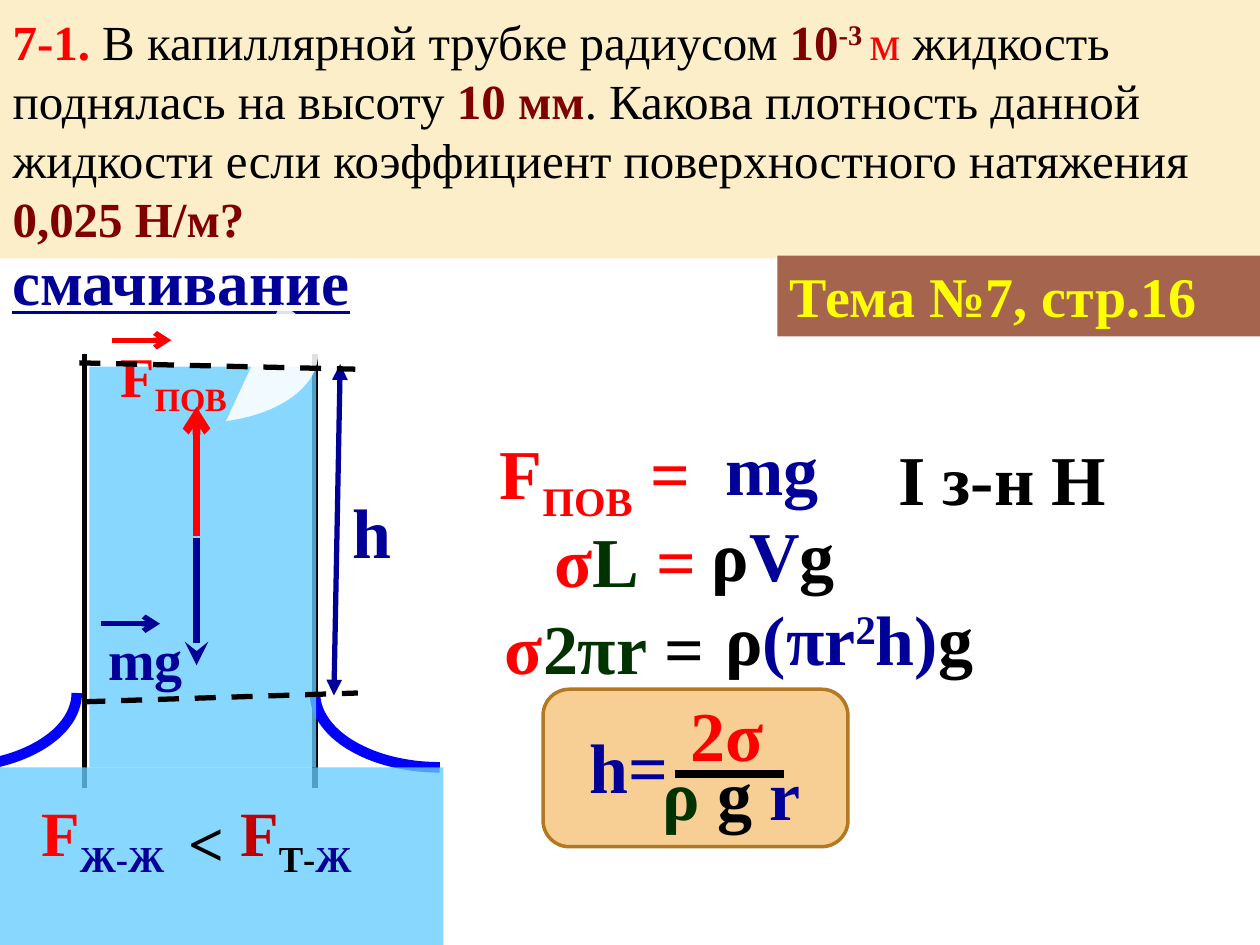
import math

from pptx import Presentation
from pptx.dml.color import RGBColor
from pptx.enum import dml, shapes, text
from pptx.oxml import xmlchemy
from pptx.util import Inches, Pt

FONT = "Times New Roman"
BLACK = RGBColor(0x00, 0x00, 0x00)
WHITE = RGBColor(0xFF, 0xFF, 0xFF)
RED = RGBColor(0xFF, 0x00, 0x00)
DARK_RED = RGBColor(0xC0, 0x00, 0x00)
MAROON = RGBColor(0x80, 0x00, 0x00)
NAVY = RGBColor(0x00, 0x00, 0x99)
BLUE = RGBColor(0x00, 0x00, 0xFF)
GREEN = RGBColor(0x00, 0x33, 0x00)
YELLOW = RGBColor(0xFF, 0xFF, 0x00)
WATER = RGBColor(0x66, 0xCC, 0xFF)
ORANGE = RGBColor(0xF0, 0xA2, 0x2E)
OCHRE = RGBColor(0xB2, 0x78, 0x22)
CREAM = RGBColor(0xFB, 0xEE, 0xC9)
BROWN = RGBColor(0xA5, 0x64, 0x4E)


def add_child(parent, tag, **attributes):
    """Append a drawing element with the given attributes."""
    child = xmlchemy.OxmlElement(tag)
    for name, value in attributes.items():
        child.set(name, str(value))
    parent.append(child)


def add_run(paragraph, content, color, *, size, bold=True, underline=False, baseline=0):
    """Add one formatted run; baseline is a percentage of the size."""
    run = paragraph.add_run()
    run.text = content
    font = run.font
    font.name, font.size, font.bold = FONT, Pt(size), bold
    font.color.rgb = color
    if underline:
        font.underline = True
    if baseline:
        font._element.set("baseline", str(baseline * 1000))


def write(shape, runs, *, size, bold=True, underline=False, wrap=False,
          grow=True, anchor=text.MSO_ANCHOR.TOP):
    """Fill a shape with one left-aligned paragraph of (text, color, options) runs."""
    frame = shape.text_frame
    frame.word_wrap = wrap
    frame.auto_size = (text.MSO_AUTO_SIZE.SHAPE_TO_FIT_TEXT if grow
                       else text.MSO_AUTO_SIZE.NONE)
    frame.vertical_anchor = anchor
    paragraph = frame.paragraphs[0]
    paragraph.alignment = text.PP_ALIGN.LEFT
    for content, color, *options in runs:
        style = {"size": size, "bold": bold, "underline": underline}
        for option in options:
            style.update(option)
        add_run(paragraph, content, color, **style)


def add_label(slide, box, *runs, size=40, **style):
    """Add a text box holding formatted runs."""
    shape = slide.shapes.add_textbox(*map(Inches, box))
    write(shape, runs, size=size, **style)


def add_block(slide, kind, box, fill, *, opacity=100, line=None):
    """Add a filled preset shape, outlined when a line colour is given."""
    shape = slide.shapes.add_shape(kind, *map(Inches, box))
    shape.shadow.inherit = False
    shape.fill.solid()
    shape.fill.fore_color.rgb = fill
    if opacity < 100:
        color = shape.fill._xPr.solidFill.srgbClr
        add_child(color, "a:alpha", val=opacity * 1000)
    if line is None:
        shape.line.fill.background()
    else:
        shape.line.color.rgb = line
        shape.line.width = Pt(2)
    return shape


def add_line(slide, start, end, color=BLACK, *, width=3, dashed=False, head=None, tail=None):
    """Add a straight line with optional dashes and arrowheads."""
    connector = slide.shapes.add_connector(
        shapes.MSO_CONNECTOR.STRAIGHT, *map(Inches, start + end))
    connector.line.color.rgb = color
    connector.line.width = Pt(width)
    if dashed:
        connector.line.dash_style = dml.MSO_LINE.DASH
    outline = connector.line._get_or_add_ln()
    if head:
        add_child(outline, "a:headEnd", type=head)
    if tail:
        add_child(outline, "a:tailEnd", type=tail)
    add_child(connector._element.spPr, "a:effectLst")


def add_meniscus(slide, center, radius_x, radius_y, steps=30):
    """Draw a lower quarter of an ellipse; a negative radius_x mirrors it."""
    angles = [math.pi / 2 * step / steps for step in range(steps + 1)]
    points = [(Inches(center[0] + radius_x * math.sin(angle)),
               Inches(center[1] + radius_y * math.cos(angle))) for angle in angles]
    builder = slide.shapes.build_freeform(*points[0])
    builder.add_line_segments(points[1:], close=False)
    curve = builder.convert_to_shape()
    curve.shadow.inherit = False
    curve.fill.background()
    curve.line.color.rgb = BLUE
    curve.line.width = Pt(6)


def add_problem(slide):
    """Put the problem statement into the title placeholder."""
    title = slide.shapes.title
    title.left, title.top, title.width, title.height = map(Inches, (0, 0, 10, 2.05))
    title.fill.solid()
    title.fill.fore_color.rgb = CREAM
    strong, raised = {"bold": True}, {"bold": True, "baseline": 30}
    write(title, [
        ("7-1.", RED, strong),
        (" В капиллярной трубке радиусом ", BLACK),
        ("10", MAROON, strong), ("-3 ", MAROON, raised), ("м", RED),
        (" жидкость поднялась на высоту ", BLACK),
        ("10 мм", MAROON, strong),
        (". Какова плотность данной жидкости если коэффициент "
         "поверхностного натяжения ", BLACK),
        ("0,025 Н/м?", MAROON, strong),
    ], size=28, bold=False, wrap=True, anchor=text.MSO_ANCHOR.MIDDLE)


def add_tube(slide):
    """Draw the capillary tube, its liquid and the forces."""
    preset, low = shapes.MSO_SHAPE, {"baseline": -25}
    for x in (0.67, 2.5):
        add_line(slide, (x, 2.81), (x, 6.25))
    add_meniscus(slide, (-0.39, 5.5), 1, 0.59)
    add_meniscus(slide, (3.49, 5.5), -0.99, 0.59)
    add_line(slide, (2.7, 2.89), (2.65, 5.52), NAVY, head="triangle", tail="triangle")
    add_block(slide, preset.RECTANGLE, (0.71, 2.91, 1.8, 3.18), WATER, opacity=78)
    surface = add_block(slide, preset.CHORD, (1.04, 1.87, 1.09, 1.88), WHITE, opacity=88)
    surface.rotation = 270
    for index, degrees in enumerate((58.27, 158.54)):
        surface.adjustments[index] = degrees * 0.6
    add_line(slide, (1.56, 4.25), (1.56, 3.23), RED, width=4.5, tail="arrow")
    add_line(slide, (1.56, 5.28), (1.56, 4.27), NAVY, width=4.5, head="stealth")
    add_label(slide, (0.86, 2.66, 1.14, 0.64), ("F", RED), ("ПОВ", RED, low), size=32)
    add_label(slide, (0.76, 4.91, 0.8, 0.64), ("mg", NAVY), size=32)
    for x, y, color in ((0.89, 2.7, RED), (0.8, 4.95, NAVY)):
        add_line(slide, (x, y), (x + 0.47, y), color, tail="arrow")
    add_label(slide, (2.7, 3.83, 0.51, 0.77), ("h", NAVY))
    add_line(slide, (0.67, 5.57), (2.84, 5.5), dashed=True)
    add_line(slide, (0.63, 2.88), (2.82, 2.93), dashed=True)
    add_block(slide, preset.RECTANGLE, (-0.06, 6.09, 3.58, 1.41), WATER, opacity=78)
    add_label(slide, (0.23, 6.25, 1.18, 0.71), ("F", RED), ("Ж-Ж", NAVY, low), size=36)
    add_label(slide, (1.4, 6.33, 0.49, 0.71), ("<", BLACK), size=36)
    add_label(slide, (1.81, 6.25, 1.1, 0.71), ("F", DARK_RED), ("Т-", BLACK, low),
              ("Ж", NAVY, low), size=36)


def add_solution(slide):
    """Write the force balance and the resulting height."""
    low, high = {"baseline": -25}, {"baseline": 30}
    add_label(slide, (3.87, 3.36, 1.83, 0.77), ("F", RED), ("ПОВ", RED, low), (" =", RED))
    add_label(slide, (5.66, 3.33, 0.95, 0.77), ("mg", NAVY))
    add_label(slide, (7.03, 3.41, 1.87, 0.77), ("I з-н Н", BLACK))
    add_label(slide, (4.3, 4.06, 1.48, 0.77), ("σ", RED), ("L", GREEN), (" =", RED))
    add_label(slide, (5.55, 4.01, 1.2, 0.77), ("ρ", BLACK), ("V", NAVY), ("g", BLACK))
    add_label(slide, (3.91, 4.75, 1.97, 0.77), ("σ", RED), ("2πr", GREEN), (" =", BLACK))
    add_label(slide, (5.66, 4.68, 2.22, 0.77), ("ρ", BLACK), ("(πr", NAVY),
              ("2", NAVY, high), ("h)", NAVY), ("g", BLACK))
    add_block(slide, shapes.MSO_SHAPE.ROUNDED_RECTANGLE, (4.31, 5.47, 2.42, 1.25),
              ORANGE, opacity=51, line=OCHRE)
    add_label(slide, (4.58, 5.69, 0.83, 0.77), ("h=", NAVY))
    add_label(slide, (5.38, 5.44, 1.2, 0.63), ("2σ", RED), wrap=True, grow=False)
    add_line(slide, (5.36, 6.14), (6.22, 6.14), width=4.5)
    add_label(slide, (5.16, 5.91, 1.48, 0.63), ("ρ", GREEN), (" g", BLACK), (" r", NAVY),
              wrap=True, grow=False)


def main():
    """Build the slide and save it."""
    presentation = Presentation()
    presentation.slide_width, presentation.slide_height = Inches(10), Inches(7.5)
    slide = presentation.slides.add_slide(presentation.slide_layouts[5])
    add_problem(slide)
    add_label(slide, (0, 1.87, 2.91, 0.71), ("смачивание", NAVY), size=36,
              underline=True, anchor=text.MSO_ANCHOR.MIDDLE)
    add_tube(slide)
    add_solution(slide)
    topic = add_block(slide, shapes.MSO_SHAPE.RECTANGLE, (6.17, 2.03, 3.83, 0.64), BROWN)
    write(topic, [("Тема №7, стр.16", YELLOW)], size=32, wrap=True)
    presentation.save("out.pptx")


if __name__ == "__main__":
    main()
